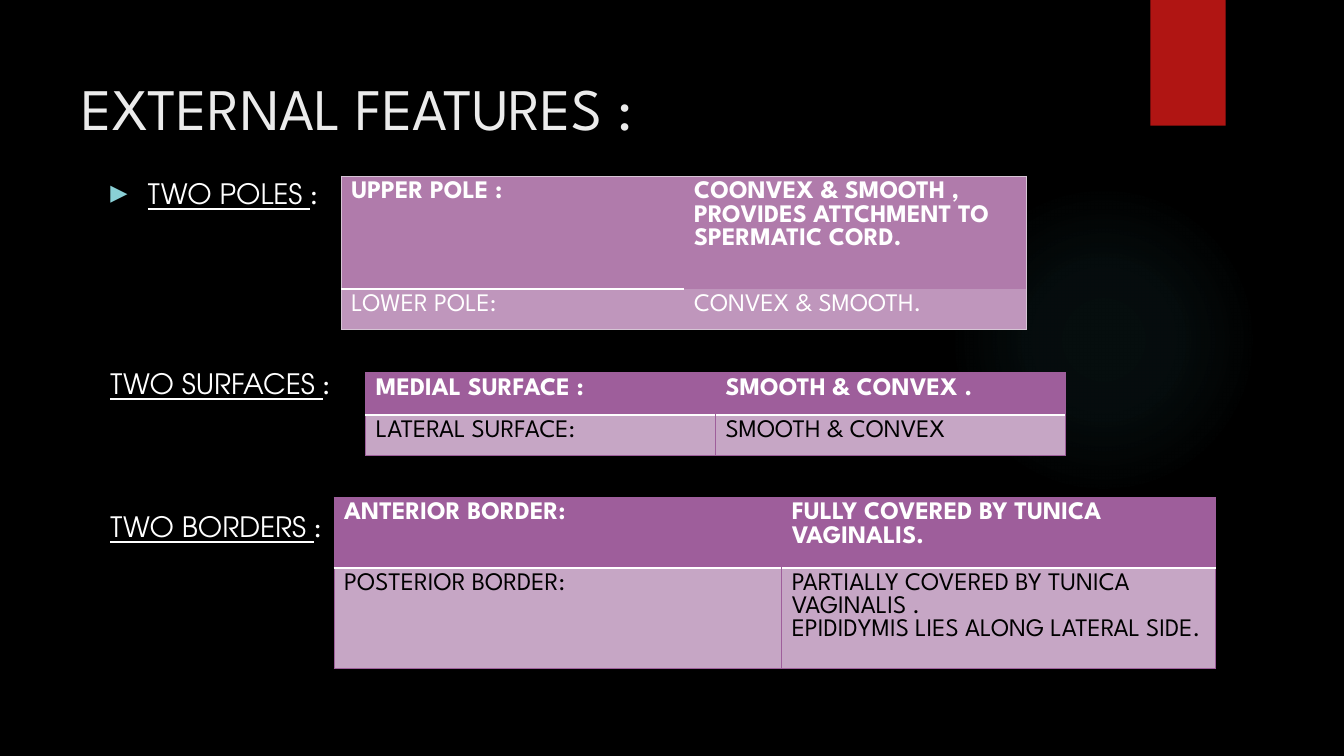
from dataclasses import dataclass

from lxml import etree
from pptx import Presentation, util as u
from pptx.dml import color
from pptx.enum import shapes, text
from pptx.oxml import ns

SANS = "League Spartan"
GEO = "TeX Gyre Adventor"
PLUM = "9E5E9B"
WHITE = "FFFFFF"
BODY = {"size": u.Pt(20), "name": SANS}
CELL = {"size": u.Pt(18), "name": SANS}
TITLE = {"size": u.Pt(42), "name": SANS}


@dataclass
class Grid:
    left: float
    top: float
    cols: tuple[float, ...]
    rows: tuple[float, ...]
    cells: list[list[str]]
    fills: tuple[str, str]
    inks: tuple[str, str]
    edge: str
    rule: float
    full: bool = True


@dataclass
class Head:
    label: str
    gap: float


GRIDS = [
    Grid(8.6, 4.44, (8.64, 8.64), (2.84, 0.83),
         [["UPPER POLE :", "COONVEX & SMOOTH , PROVIDES ATTCHMENT TO SPERMATIC CORD."],
          ["LOWER POLE:", "CONVEX & SMOOTH."]],
         ("B07BAB", "BF96BC"), (WHITE, WHITE), "D6C5D5", 1.5, False),
    Grid(9.22, 9.39, (8.81, 8.81), (1.07, 0.83),
         [["MEDIAL SURFACE :", "SMOOTH & CONVEX ."],
          ["LATERAL SURFACE:", "SMOOTH & CONVEX"]],
         (PLUM, "C6A6C5"), (WHITE, "000000"), PLUM, 1.5),
    Grid(8.42, 12.53, (11.28, 10.94), (1.43, 2.02),
         [["ANTERIOR BORDER:", "FULLY COVERED BY TUNICA VAGINALIS."],
          ["POSTERIOR BORDER:",
           "PARTIALLY COVERED BY TUNICA VAGINALIS .\n"
           "EPIDIDYMIS LIES ALONG LATERAL SIDE."]],
         (PLUM, "C6A6C5"), (WHITE, "000000"), PLUM, 1.5),
]
HEADS = [Head("TWO POLES ", 0), Head("TWO SURFACES ", 112), Head("TWO BORDERS ", 78)]


def rgb(hue: str) -> color.RGBColor:
    return color.RGBColor.from_string(hue)


def style(font, form: dict, hue: str) -> None:
    for key, val in form.items():
        setattr(font, key, val)
    font.color.rgb = rgb(hue)


def node(root, tag: str, **attrs: str):
    return etree.SubElement(root, ns.qn(tag), attrs)


def shape(slide, kind, left: float, top: float, wide: float, high: float, hue: str):
    item = slide.shapes.add_shape(kind, u.Cm(left), u.Cm(top), u.Cm(wide), u.Cm(high))
    item.shadow.inherit = False
    item.fill.solid()
    item.fill.fore_color.rgb = rgb(hue)
    item.line.fill.background()
    return item


def glow(slide) -> None:
    item = shape(slide, shapes.MSO_SHAPE.OVAL, 23.9, 4.65, 7.82, 7.82, "50B9C1")
    props = item.fill._xPr
    old = props.find(ns.qn("a:solidFill"))
    grad = etree.Element(ns.qn("a:gradFill"), rotWithShape="1")
    stops = node(grad, "a:gsLst")
    for pos, alpha in ((0, 7), (36, 6), (69, 0), (100, 0)):
        stop = node(stops, "a:gs", pos=str(pos * 1000))
        node(node(stop, "a:srgbClr", val="50B9C1"), "a:alpha", val=str(alpha * 1000))
    way = node(grad, "a:path", path="circle")
    node(way, "a:fillToRect", l="50000", t="50000", r="50000", b="50000")
    props.replace(old, grad)


def frame(slide, left: float, top: float, wide: float, high: float):
    box = slide.shapes.add_textbox(u.Cm(left), u.Cm(top), u.Cm(wide), u.Cm(high))
    box.text_frame.word_wrap = True
    box.text_frame.vertical_anchor = text.MSO_ANCHOR.TOP
    return box.text_frame


def bullet(para) -> None:
    props = para._p.get_or_add_pPr()
    props.set("marL", str(u.Cm(0.95)))
    props.set("indent", str(-u.Cm(0.95)))
    node(node(props, "a:buClr"), "a:srgbClr", val="8AD0D6")
    node(props, "a:buSzPct", val="80000")
    node(props, "a:buFont", typeface="DejaVu Sans")
    node(props, "a:buChar", char="▶")


def heads(slide) -> None:
    body = frame(slide, 2.53, 4.32, 6.5, 10)
    for num, head in enumerate(HEADS):
        para = body.add_paragraph() if num else body.paragraphs[0]
        if num:
            para.space_before = u.Pt(head.gap)
        else:
            bullet(para)
        for word, form in ((head.label, {"name": GEO, "underline": True}), (":", {})):
            run = para.add_run()
            run.text = word
            style(run.font, BODY | form, WHITE)


def border(cell, side: str, hue: str, size: float) -> None:
    line = node(cell._tc.get_or_add_tcPr(), f"a:ln{side}", w=str(u.Pt(size)))
    if size:
        node(node(line, "a:solidFill"), "a:srgbClr", val=hue)
    else:
        node(line, "a:noFill")


def table(slide, grid: Grid) -> None:
    item = slide.shapes.add_table(
        len(grid.rows), len(grid.cols), u.Cm(grid.left), u.Cm(grid.top),
        u.Cm(sum(grid.cols)), u.Cm(sum(grid.rows))).table
    for col, wide in zip(item.columns, grid.cols):
        col.width = u.Cm(wide)
    for row, high in zip(item.rows, grid.rows):
        row.height = u.Cm(high)
    for r, line in enumerate(grid.cells):
        for c, words in enumerate(line):
            cell = item.cell(r, c)
            cell.text = words
            rule = (WHITE, grid.rule if grid.full or c == 0 else 0)
            rim = (grid.edge, 0.75)
            inner = (grid.edge, 0.75 if grid.full and r else 0)
            border(cell, "L", *(inner if c else rim))
            border(cell, "R", *(rim if c else inner))
            border(cell, "T", *(rule if r else rim))
            border(cell, "B", *(rim if r else rule))
            cell.fill.solid()
            cell.fill.fore_color.rgb = rgb(grid.fills[r])
            for para in cell.text_frame.paragraphs:
                for run in para.runs:
                    style(run.font, CELL | {"bold": r == 0}, grid.inks[r])


def main() -> None:
    deck = Presentation()
    deck.slide_width, deck.slide_height = u.Cm(33.87), u.Cm(19.05)
    slide = deck.slides.add_slide(deck.slide_layouts[6])
    slide.background.fill.solid()
    slide.background.fill.fore_color.rgb = rgb("000000")
    glow(slide)
    shape(slide, shapes.MSO_SHAPE.RECTANGLE, 28.99, 0, 1.9, 3.17, "B01513")
    run = frame(slide, 1.8, 1.67, 26.14, 2.5).paragraphs[0].add_run()
    run.text = "EXTERNAL FEATURES :"
    style(run.font, TITLE, "EBEBEB")
    heads(slide)
    for grid in GRIDS:
        table(slide, grid)
    deck.save("out.pptx")


if __name__ == "__main__":
    main()
